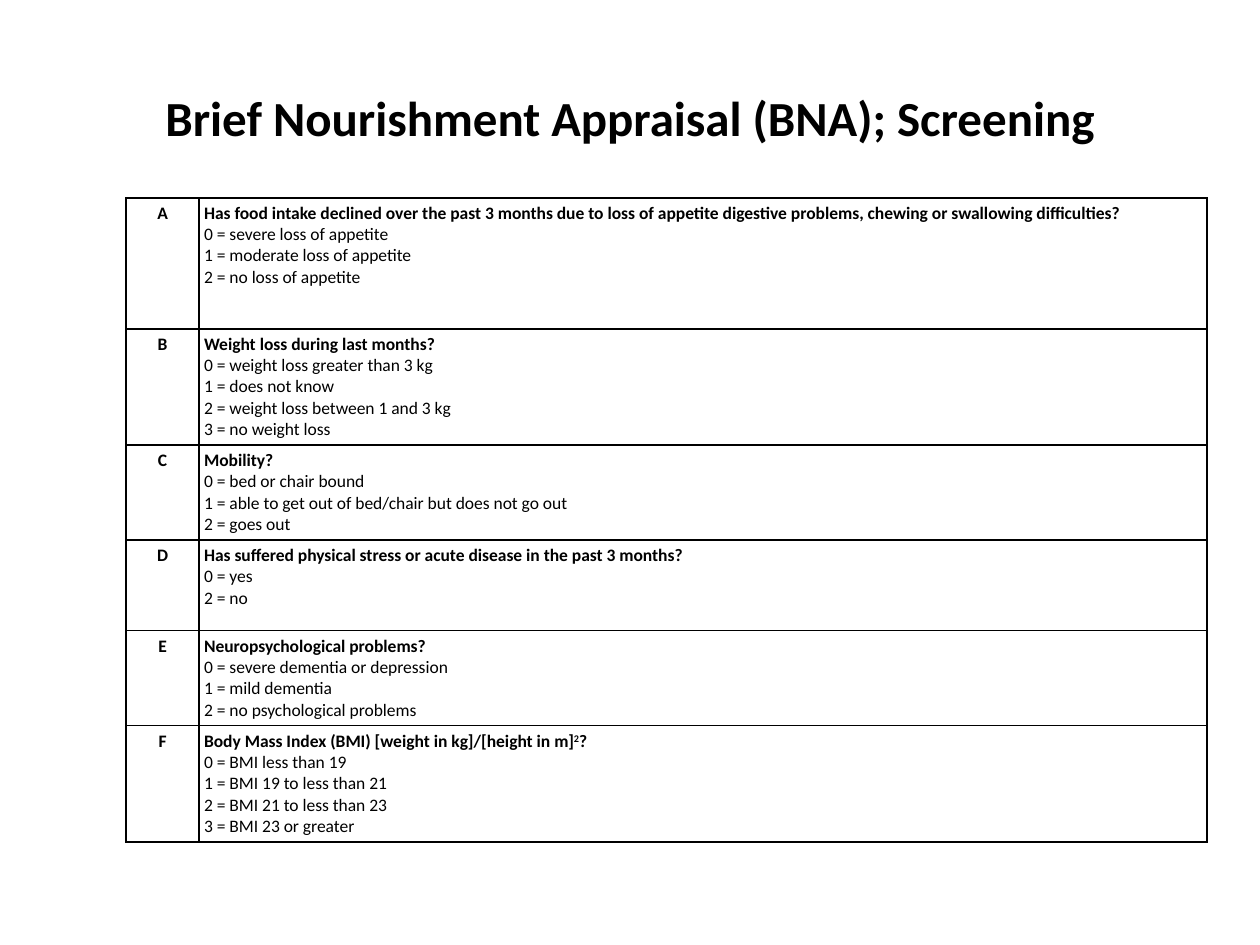
from lxml import etree
from pptx import Presentation
from pptx.dml.color import RGBColor
from pptx.enum.text import MSO_ANCHOR, PP_ALIGN
from pptx.oxml.ns import qn
from pptx.util import Inches, Pt

CENTER, LEFT = PP_ALIGN.CENTER, PP_ALIGN.LEFT
MIDDLE = MSO_ANCHOR.MIDDLE
COLORS = {"text": "000000", "border": "000000", "cell": "FFFFFF"}
QUESTIONS = [
    ("A", 1.04, ["Has food intake declined over the past 3 months due to loss of appetite "
                 "digestive problems, chewing or swallowing difficulties?"],
     ["0 = severe loss of appetite", "1 = moderate loss of appetite",
      "2 = no loss of appetite"]),
    ("B", 0.88, ["Weight loss during last months?"],
     ["0 = weight loss greater than 3 kg", "1 = does not know",
      "2 = weight loss between 1 and 3 kg", "3 = no weight loss"]),
    ("C", 0.72, ["Mobility?"],
     ["0 = bed or chair bound", "1 = able to get out of bed/chair but does not go out",
      "2 = goes out"]),
    ("D", 0.72, ["Has suffered physical stress or acute disease in the past 3 months?"],
     ["0 = yes", "2 = no"]),
    ("E", 0.72, ["Neuropsychological problems?"],
     ["0 = severe dementia or depression", "1 = mild dementia",
      "2 = no psychological problems"]),
    ("F", 0.88, ["Body Mass Index (BMI) [weight in kg]/[height in m]", "2", "?"],
     ["0 = BMI less than 19", "1 = BMI 19 to less than 21",
      "2 = BMI 21 to less than 23", "3 = BMI 23 or greater"]),
]


class SlideBuilder:
    """Adds styled elements to the current slide; odd-numbered runs are superscript."""

    font = "Calibri"
    title_size = 28
    table_size = 10
    margin = 0.04
    border_width = 1

    def __init__(self, prs):
        self.s = prs.slides.add_slide(prs.slide_layouts[5])

    def paragraph(self, p, runs, size, bold=False, align=LEFT):
        p.alignment = align
        p.font.name = self.font
        p.font.size = Pt(size)
        p.font.bold = bold
        p.font.color.rgb = RGBColor.from_string(COLORS["text"])
        for i, text in enumerate(runs):
            r = p.add_run()
            r.text = text
            if i % 2:
                r.font._element.set("baseline", "30000")

    def title(self, text, left, top, width, height):
        sp = self.s.shapes.title
        sp.left, sp.top = Inches(left), Inches(top)
        sp.width, sp.height = Inches(width), Inches(height)
        tf = sp.text_frame
        tf.word_wrap = True
        tf.vertical_anchor = MIDDLE
        self.paragraph(tf.paragraphs[0], [text], self.title_size, True, CENTER)

    def borders(self, cell):
        tc_pr = cell._tc.get_or_add_tcPr()
        for side in ("a:lnL", "a:lnR", "a:lnT", "a:lnB"):
            ln = etree.SubElement(tc_pr, qn(side), w=str(Pt(self.border_width)))
            fill = etree.SubElement(ln, qn("a:solidFill"))
            etree.SubElement(fill, qn("a:srgbClr"), val=COLORS["border"])

    def cell(self, cell, heading, lines=(), align=LEFT):
        cell.margin_left = cell.margin_right = Inches(self.margin)
        cell.margin_top = cell.margin_bottom = Inches(self.margin)
        self.borders(cell)
        cell.fill.solid()
        cell.fill.fore_color.rgb = RGBColor.from_string(COLORS["cell"])
        tf = cell.text_frame
        self.paragraph(tf.paragraphs[0], heading, self.table_size, True, align)
        for line in lines:
            self.paragraph(tf.add_paragraph(), [line], self.table_size, align=align)

    def question_table(self, questions, left, top, widths):
        height = sum(q[1] for q in questions)
        table = self.s.shapes.add_table(
            len(questions), len(widths), Inches(left), Inches(top),
            Inches(sum(widths)), Inches(height)).table
        table.first_row = table.horz_banding = False
        for column, width in zip(table.columns, widths):
            column.width = Inches(width)
        for row, (letter, row_height, question, answers) in zip(table.rows, questions):
            row.height = Inches(row_height)
            self.cell(row.cells[0], [letter], align=CENTER)
            self.cell(row.cells[1], question, answers)


def main():
    prs = Presentation()
    prs.slide_width, prs.slide_height = Inches(10), Inches(7.5)
    slide = SlideBuilder(prs)
    slide.title("Brief Nourishment Appraisal (BNA); Screening", 0.5, 0.3, 9, 1.25)
    slide.question_table(QUESTIONS, 1, 1.57, [0.58, 8])
    prs.save("out.pptx")


if __name__ == "__main__":
    main()
